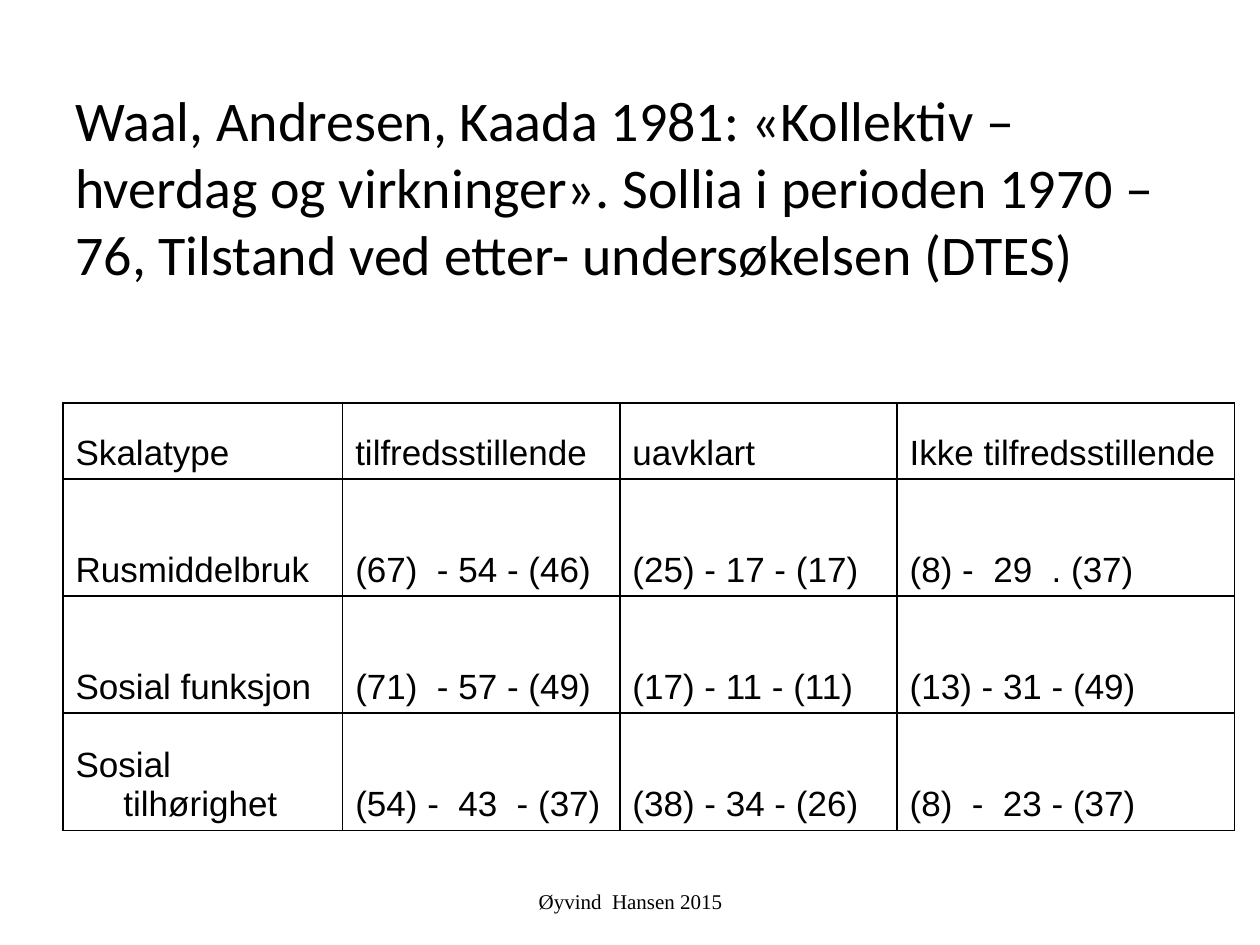
"""Builds a slide with a title, a follow-up results table and a footer."""
from dataclasses import dataclass

from lxml import etree
from pptx import Presentation, util as u
from pptx.dml.color import RGBColor
from pptx.enum import text
from pptx.oxml.ns import qn


@dataclass(frozen=True)
class Theme:
    ink: RGBColor = RGBColor(0, 0, 0)
    paper: RGBColor = RGBColor(255, 255, 255)
    border: u.Length = u.Pt(1)
    indent: u.Length = u.Inches(0.38)


@dataclass(frozen=True)
class Style:
    face: str
    size: int
    align: text.PP_ALIGN = text.PP_ALIGN.LEFT


@dataclass(frozen=True)
class TextBlock:
    content: str
    left: float
    top: float
    width: float
    height: float
    style: Style


THEME = Theme()
CELL_STYLE = Style("Arial", 20)
BLOCKS = (
    TextBlock("Øyvind  Hansen 2015", 3.42, 6.95, 3.17, 0.4,
              Style("Times New Roman", 12, text.PP_ALIGN.CENTER)),
    TextBlock("Waal, Andresen, Kaada 1981: «Kollektiv – hverdag og virkninger». "
              "Sollia i perioden 1970 – 76, Tilstand ved etter- undersøkelsen (DTES)",
              0.5, 0.3, 9, 2.35, Style("Calibri", 32)),
)
COLUMN_WIDTHS = (2.22, 2.2, 2.2, 2.68)
ROW_HEIGHTS = (0.6, 0.93, 0.93, 0.93)
RESULTS = (
    ("Skalatype", "tilfredsstillende", "uavklart", "Ikke tilfredsstillende"),
    ("Rusmiddelbruk", "(67)  - 54 - (46)", "(25) - 17 - (17)", "(8) -  29  . (37)"),
    ("Sosial funksjon", "(71)  - 57 - (49)", "(17) - 11 - (11)", "(13) - 31 - (49)"),
    ("Sosial tilhørighet", "(54) -  43  - (37)", "(38) - 34 - (26)", "(8)  -  23 - (37)"),
)


def write(tf, content: str, style: Style):
    p = tf.paragraphs[0]
    p.text = content
    p.alignment = style.align
    p.font.name = style.face
    p.font.size = u.Pt(style.size)
    p.font.color.rgb = THEME.ink
    return p


def add_text(s, block: TextBlock) -> None:
    sp = s.shapes.add_textbox(u.Inches(block.left), u.Inches(block.top),
                              u.Inches(block.width), u.Inches(block.height))
    tf = sp.text_frame
    tf.word_wrap = True
    tf.vertical_anchor = text.MSO_ANCHOR.MIDDLE
    write(tf, block.content, block.style)


def add_borders(cell) -> None:
    tc_pr = cell._tc.get_or_add_tcPr()
    for side in ("lnL", "lnR", "lnT", "lnB"):
        ln = etree.SubElement(tc_pr, qn(f"a:{side}"), w=str(THEME.border))
        fill = etree.SubElement(ln, qn("a:solidFill"))
        etree.SubElement(fill, qn("a:srgbClr"), val=str(THEME.ink))


def fill_cell(cell, content: str) -> None:
    p = write(cell.text_frame, content, CELL_STYLE)
    p_pr = p._p.get_or_add_pPr()
    p_pr.set("marL", str(THEME.indent))
    p_pr.set("indent", str(-THEME.indent))
    cell.vertical_anchor = text.MSO_ANCHOR.BOTTOM
    add_borders(cell)
    cell.fill.solid()
    cell.fill.fore_color.rgb = THEME.paper


def add_results(s) -> None:
    table = s.shapes.add_table(len(ROW_HEIGHTS), len(COLUMN_WIDTHS),
                               u.Inches(0.5), u.Inches(3.2),
                               u.Inches(sum(COLUMN_WIDTHS)),
                               u.Inches(sum(ROW_HEIGHTS))).table
    table.first_row = table.horz_banding = False
    for column, width in zip(table.columns, COLUMN_WIDTHS):
        column.width = u.Inches(width)
    for row, height, values in zip(table.rows, ROW_HEIGHTS, RESULTS):
        row.height = u.Inches(height)
        for cell, content in zip(row.cells, values):
            fill_cell(cell, content)


def main() -> None:
    prs = Presentation()
    prs.slide_width, prs.slide_height = u.Inches(10), u.Inches(7.5)
    s = prs.slides.add_slide(prs.slide_layouts[6])
    for block in BLOCKS:
        add_text(s, block)
    add_results(s)
    prs.save("out.pptx")


if __name__ == "__main__":
    main()
